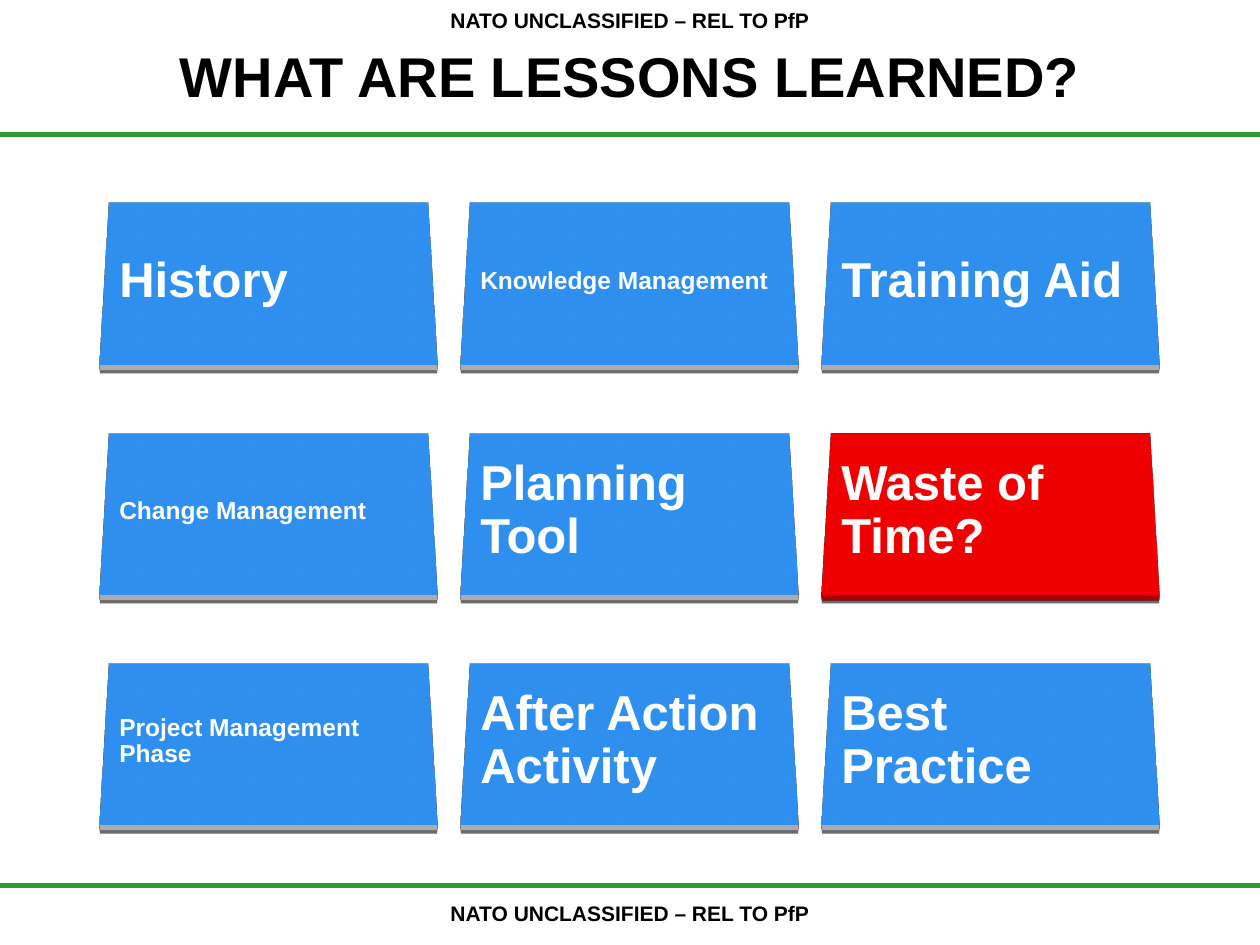
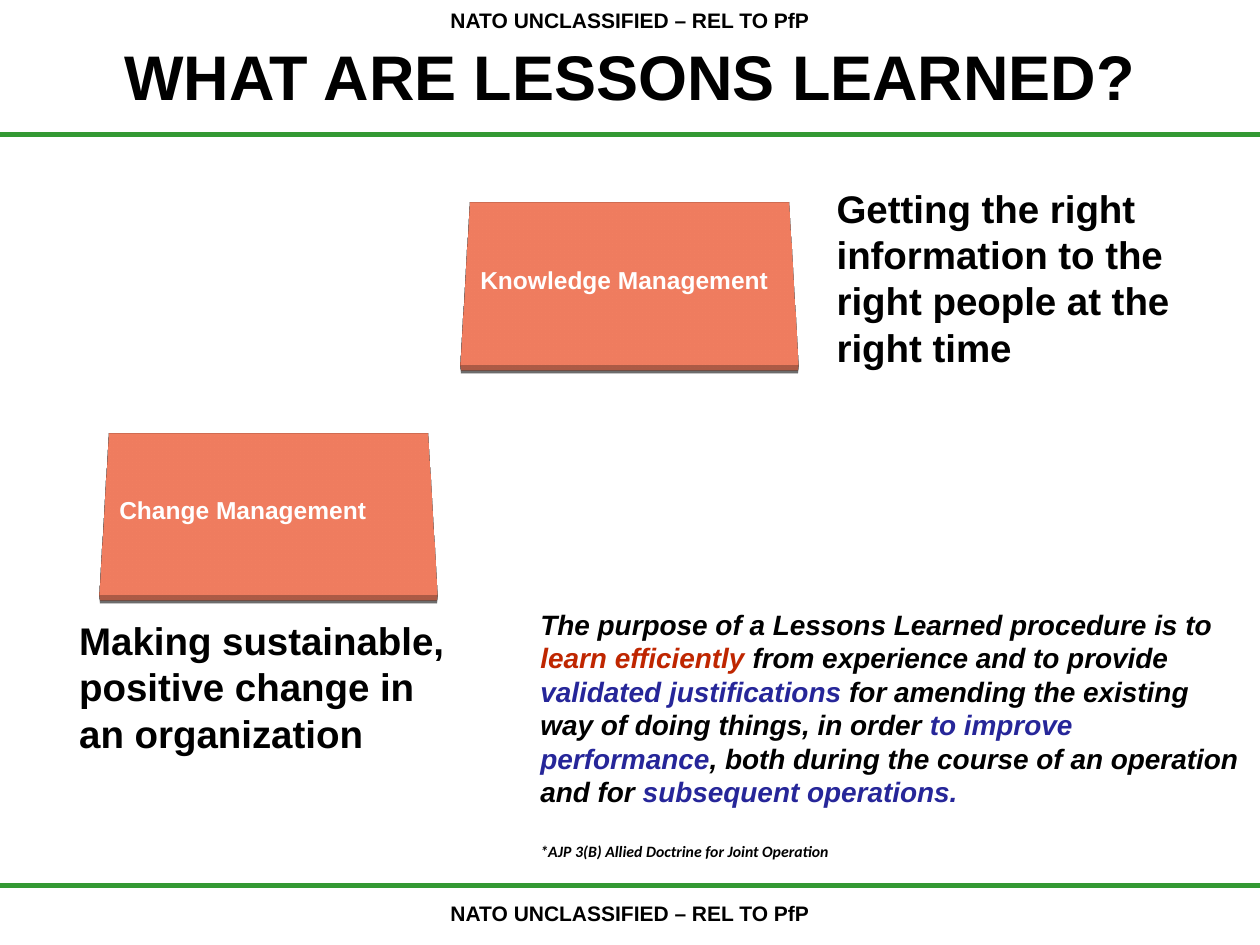
from lxml import etree
from pptx import Presentation
from pptx.dml.color import RGBColor
from pptx.enum import shapes, text
from pptx.oxml import parse_xml
from pptx.oxml.ns import nsdecls, qn
from pptx.util import Pt

COLORS = {
    "ink": "000000",
    "paper": "FFFFFF",
    "rule": "339933",
    "idea": "3399FF",
    "doubt": "FF0000",
    "management": "FF8566",
    "learn": "BF2600",
    "benefit": "262699",
}
# Side colour of the raised cards, by face colour
SIDES = {"idea": "paper", "doubt": "doubt", "management": "management"}

SLIDE_W, SLIDE_H = 720, 540
MARKING = "NATO UNCLASSIFIED – REL TO PfP"
TITLE = "WHAT ARE LESSONS LEARNED?"
CARD_W, CARD_H = 187.7, 112.7
CARD_LEFT, CARD_TOP = 59.6, 104.4
COLUMN_STEP, ROW_STEP = 206.3, 131.5
LARGE, SMALL = 28, 14

CARDS = [
    [("History", LARGE), ("Knowledge Management", SMALL), ("Training Aid", LARGE)],
    [("Change Management", SMALL), ("Planning Tool", LARGE), ("Waste of Time?", LARGE)],
    [("Project Management Phase", SMALL), ("After Action Activity", LARGE),
     ("Best Practice", LARGE)],
]
PURPOSE = [
    ("The purpose of a Lessons Learned procedure is to ", "ink"),
    ("learn efficiently ", "learn"),
    ("from experience and to provide ", "ink"),
    ("validated justifications ", "benefit"),
    ("for amending the existing way of doing things, in order ", "ink"),
    ("to improve performance", "benefit"),
    (", both during the course of an operation and for ", "ink"),
    ("subsequent operations.", "benefit"),
]


def rgb(name):
    return RGBColor.from_string(COLORS[name])


def add_run(paragraph, words, color="ink", **format_values):
    run = paragraph.add_run()
    run.text = words
    run.font.color.rgb = rgb(color)
    for attribute, value in {"name": "Arial", "bold": True, **format_values}.items():
        setattr(run.font, attribute, value)


def add_text(slide, box, words, size, align=text.PP_ALIGN.LEFT, **format_values):
    """Add a text box; words is a string or a list of (words, colour) pairs."""
    frame = slide.shapes.add_textbox(*map(Pt, box)).text_frame
    frame.word_wrap = True
    paragraph = frame.paragraphs[0]
    paragraph.alignment = align
    pieces = [(words, "ink")] if isinstance(words, str) else words
    for piece, color in pieces:
        add_run(paragraph, piece, color, size=Pt(size), **format_values)
    return frame


def add_rule(slide, y):
    rule = slide.shapes.add_connector(
        shapes.MSO_CONNECTOR.STRAIGHT, Pt(-1), Pt(y), Pt(SLIDE_W + 2), Pt(y))
    rule.line.color.rgb = rgb("rule")
    rule.line.width = Pt(3)
    etree.SubElement(rule._element.spPr, qn("a:effectLst"))


def add_marked_slide(prs, title_size):
    """Add a slide with its title, two green rules and two markings."""
    slide = prs.slides.add_slide(prs.slide_layouts[5])
    for rule_y, marking_y in ((77, 0.7), (506.2, 511.2)):
        add_rule(slide, rule_y)
        add_text(slide, (0, marking_y, SLIDE_W, 21.6), MARKING, 12,
                 text.PP_ALIGN.CENTER)

    title = slide.shapes.title
    place = {"left": 0, "top": -2.2, "width": SLIDE_W, "height": 90}
    for attribute, value in place.items():
        setattr(title, attribute, Pt(value))
    title.text_frame.vertical_anchor = text.MSO_ANCHOR.MIDDLE
    heading = title.text_frame.paragraphs[0]
    heading.alignment = text.PP_ALIGN.CENTER
    add_run(heading, TITLE, size=Pt(title_size))
    return slide


def tilt(card, side):
    """Lean the card back and give it a thin edge and a soft shadow."""
    effects = (
        f'<a:effectLst {nsdecls("a")}><a:outerShdw blurRad="{Pt(3.1)}" '
        f'dist="{Pt(1.8)}" dir="5400000" rotWithShape="0"><a:srgbClr '
        f'val="{COLORS["ink"]}"><a:alpha val="35000"/></a:srgbClr>'
        '</a:outerShdw></a:effectLst>',
        f'<a:scene3d {nsdecls("a")}><a:camera prst="perspectiveRelaxedModerately"/>'
        '<a:lightRig rig="balanced" dir="t"/></a:scene3d>',
        f'<a:sp3d {nsdecls("a")} extrusionH="{Pt(6)}" prstMaterial="plastic">'
        f'<a:extrusionClr><a:srgbClr val="{COLORS[side]}"/></a:extrusionClr></a:sp3d>',
    )
    for effect in effects:
        card._element.spPr.append(parse_xml(effect))


def add_card(slide, column, row, words, size, face):
    left = CARD_LEFT + column * COLUMN_STEP
    top = CARD_TOP + row * ROW_STEP
    card = slide.shapes.add_shape(
        shapes.MSO_SHAPE.RECTANGLE, *map(Pt, (left, top, CARD_W, CARD_H)))
    card.fill.solid()
    card.fill.fore_color.rgb = rgb(face)
    card.line.fill.background()
    tilt(card, SIDES[face])

    frame = card.text_frame
    frame.word_wrap = True
    frame.vertical_anchor = text.MSO_ANCHOR.MIDDLE
    for side in ("left", "top", "right", "bottom"):
        setattr(frame, f"margin_{side}", Pt(8.6))
    label = frame.paragraphs[0]
    label.alignment = text.PP_ALIGN.LEFT
    label.line_spacing = 0.9
    add_run(label, words, "paper", size=Pt(size))


def add_ideas_slide(prs):
    slide = add_marked_slide(prs, 32)
    for row, cards in enumerate(CARDS):
        for column, (words, size) in enumerate(cards):
            face = "doubt" if words.endswith("?") else "idea"
            add_card(slide, column, row, words, size, face)


def add_purpose_slide(prs):
    slide = add_marked_slide(prs, 36)
    for column, row in ((1, 0), (0, 1)):
        add_card(slide, column, row, *CARDS[row][column], "management")
    add_text(slide, (471, 102.2, 227.5, 113.8),
             "Getting the right information to the right people at the right time", 22)
    add_text(slide, (38.2, 349.2, 227.5, 87.1),
             "Making sustainable, positive change in an organization", 22)
    purpose = add_text(slide, (301.7, 343.4, 419, 134.6), PURPOSE, 16, italic=True)
    reference = purpose.add_paragraph()
    reference.space_before = Pt(19)
    add_run(reference, "*AJP 3(B) Allied Doctrine for Joint Operation",
            name="Calibri", size=Pt(9), italic=True)


def main():
    prs = Presentation()
    prs.slide_width, prs.slide_height = Pt(SLIDE_W), Pt(SLIDE_H)
    add_ideas_slide(prs)
    add_purpose_slide(prs)
    prs.save("out.pptx")


if __name__ == "__main__":
    main()
